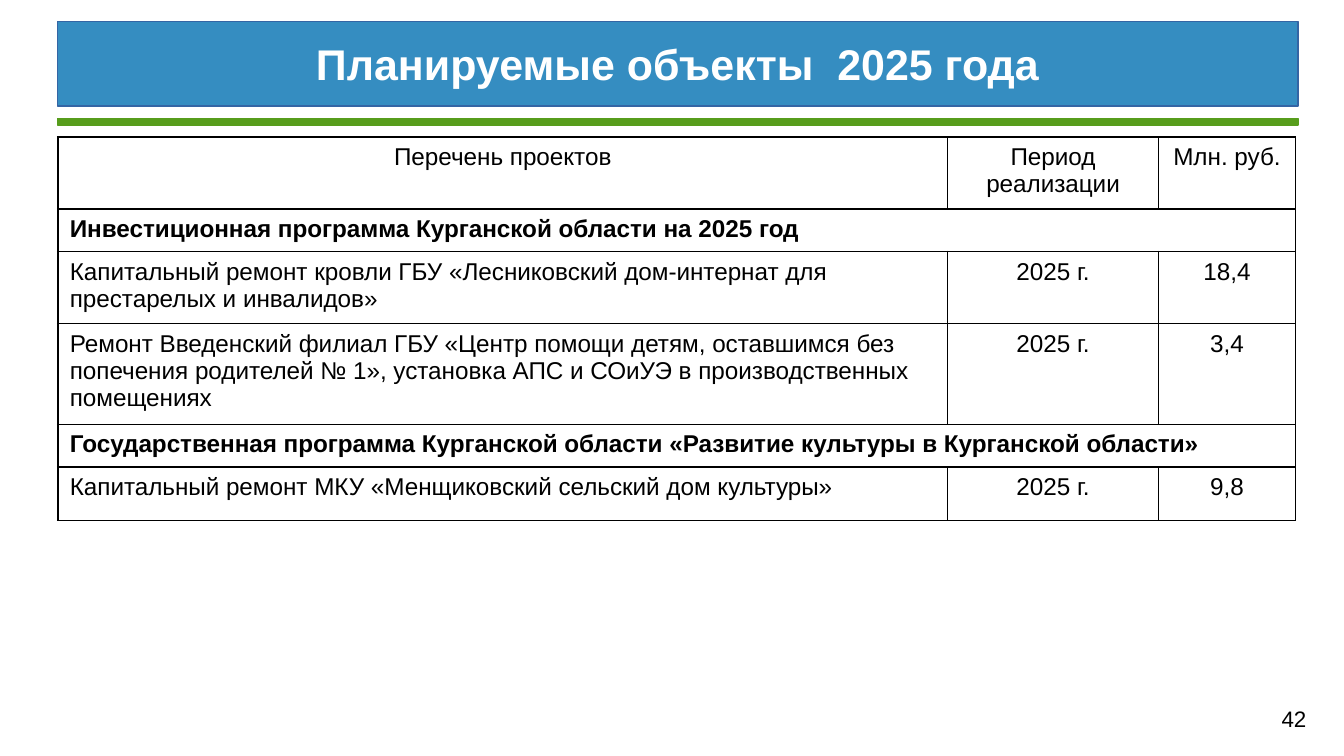
from lxml import etree
from pptx import Presentation
from pptx.dml.color import RGBColor
from pptx.enum.shapes import MSO_SHAPE
from pptx.enum.text import MSO_ANCHOR, PP_ALIGN
from pptx.oxml.ns import qn
from pptx.util import Inches, Pt

RECT = MSO_SHAPE.RECTANGLE
MIDDLE = MSO_ANCHOR.MIDDLE
LEFT, CENTER, RIGHT = PP_ALIGN.LEFT, PP_ALIGN.CENTER, PP_ALIGN.RIGHT
EDGE, WIDTH = 0.43, 9.23


def color(code):
    return RGBColor.from_string(code)


def write(frame, text, size=13, ink="000000", bold=False, align=LEFT):
    frame.word_wrap = True
    para = frame.paragraphs[0]
    para.alignment = align
    run = para.add_run()
    run.text = text
    run.font.name = "Arial"
    run.font.size = Pt(size)
    run.font.bold = bold
    run.font.color.rgb = color(ink)


deck = Presentation()
deck.slide_width = Inches(10)
deck.slide_height = Inches(10 * 9 / 16)
slide = deck.slides.add_slide(deck.slide_layouts[6])

# Title banner and the green rule below it
bars = []
for top, height, fill, line in [
    (0.16, 0.63, "358DC1", "3465A4"),
    (0.88, 0.05, "579D1C", "579D1C"),
]:
    bar = slide.shapes.add_shape(
        RECT, Inches(EDGE), Inches(top), Inches(WIDTH), Inches(height))
    bar.shadow.inherit = False
    bar.fill.solid()
    bar.fill.fore_color.rgb = color(fill)
    bar.line.color.rgb = color(line)
    bar.line.width = Pt(0.75)
    bars.append(bar)
title = bars[0].text_frame
title.vertical_anchor = MIDDLE
title.margin_left = title.margin_right = Inches(0.07)
title.margin_top = title.margin_bottom = Inches(0.04)
write(title, "Планируемые объекты  2025 года", size=23, ink="FFFFFF",
      bold=True, align=CENTER)

# Page number
page = slide.shapes.add_textbox(
    Inches(9.25), Inches(5.2), Inches(0.55), Inches(0.29)).text_frame
page.margin_left = page.margin_right = Inches(0.08)
page.margin_top, page.margin_bottom = Inches(0.05), Inches(0.04)
write(page, "42", size=12, align=RIGHT)

# Project table: a row with one entry is a section heading across all columns
rows = [
    (0.53, ["Перечень проектов", "Период реализации", "Млн. руб."]),
    (0.3, ["Инвестиционная программа Курганской области на 2025 год"]),
    (0.5, ["Капитальный ремонт кровли ГБУ «Лесниковский дом-интернат для "
           "престарелых и инвалидов»", "2025 г.", "18,4"]),
    (0.7, ["Ремонт Введенский филиал ГБУ «Центр помощи детям, оставшимся без "
           "попечения родителей № 1», установка АПС и СОиУЭ в "
           "производственных помещениях", "2025 г.", "3,4"]),
    (0.3, ["Государственная программа Курганской области «Развитие культуры "
           "в Курганской области»"]),
    (0.4, ["Капитальный ремонт МКУ «Менщиковский сельский дом культуры»",
           "2025 г.", "9,8"]),
]
cols = [6.62, 1.57, 1.02]
table = slide.shapes.add_table(
    len(rows), len(cols), Inches(EDGE), Inches(1.02),
    Inches(sum(cols)), Inches(sum(height for height, _ in rows))).table
table.first_row = table.horz_banding = False
for col, width in zip(table.columns, cols):
    col.width = Inches(width)

for r, (height, texts) in enumerate(rows):
    table.rows[r].height = Inches(height)
    head = len(texts) == 1
    if head:
        table.cell(r, 0).merge(table.cell(r, len(cols) - 1))
    for c, text in enumerate(texts):
        write(table.cell(r, c).text_frame, text, bold=head,
              align=CENTER if r == 0 or c else LEFT)

for cell in table.iter_cells():
    cell.margin_left = cell.margin_right = Inches(0.09)
    cell.margin_top = cell.margin_bottom = Inches(0.05)
    props = cell._tc.get_or_add_tcPr()
    for side in ("a:lnL", "a:lnR", "a:lnT", "a:lnB"):
        line = etree.SubElement(props, qn(side), w=str(Pt(0.96)))
        fill = etree.SubElement(line, qn("a:solidFill"))
        etree.SubElement(fill, qn("a:srgbClr"), val="000000")
    cell.fill.background()

deck.save("out.pptx")
